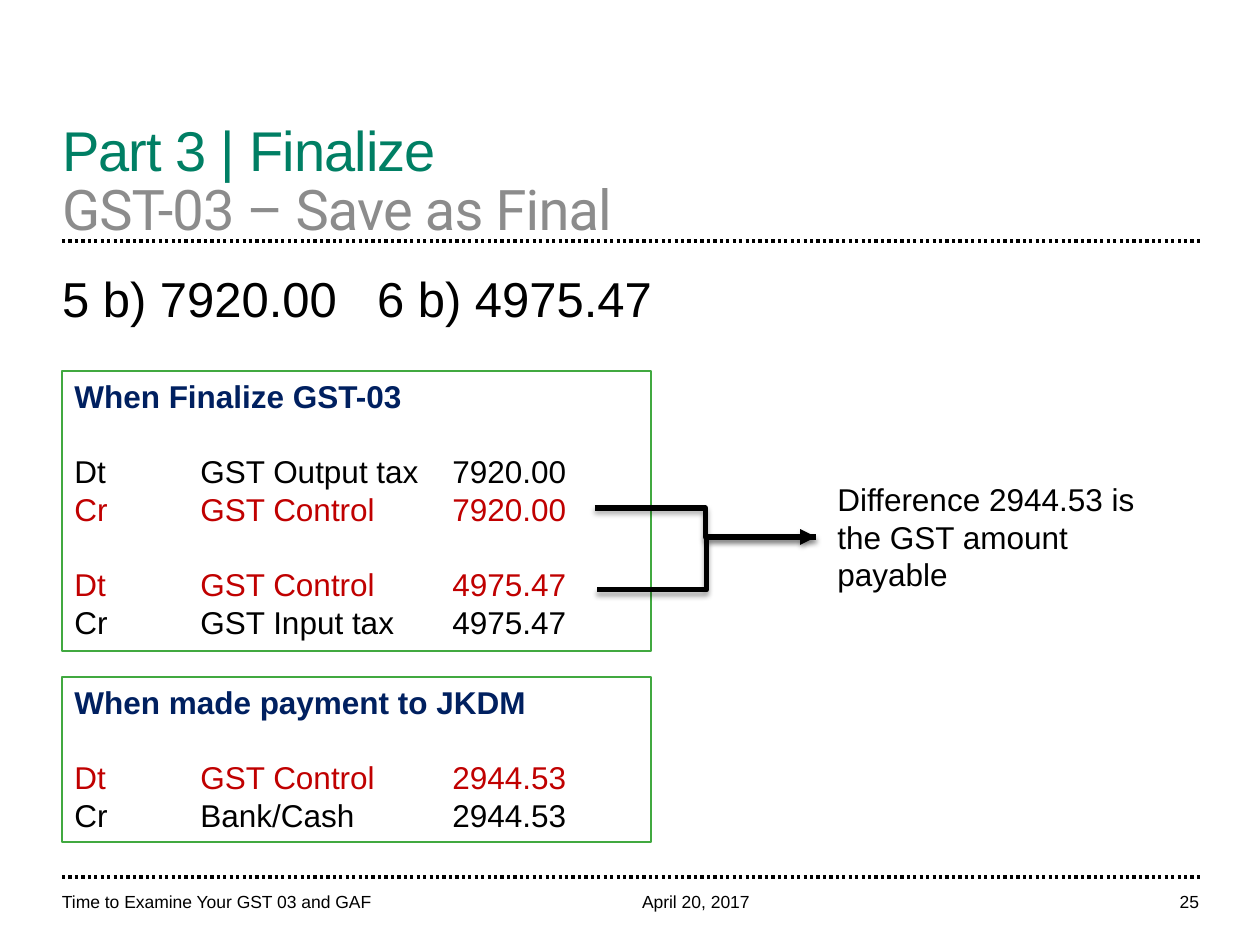
"""Build the GST-03 "Save as Final" slide with its journal entries."""
from lxml.etree import SubElement
from pptx import Presentation
from pptx.dml.color import RGBColor
from pptx.enum.dml import MSO_LINE
from pptx.enum.shapes import MSO_CONNECTOR, MSO_SHAPE
from pptx.enum.text import MSO_ANCHOR, MSO_AUTO_SIZE, PP_ALIGN
from pptx.oxml.ns import qn
from pptx.util import Emu, Pt

COLORS = {"black": "000000", "green": "007F64", "gray": "8C8C8C",
          "navy": "002060", "red": "C00000", "border": "41A940"}


def px(count):
    return Emu(round(count * 914400 / 126))


def write(para, text, size, color="black", font="Arial", bold=False):
    run = para.add_run()
    run.text = text
    run.font.size = Pt(size)
    run.font.name = font
    run.font.bold = bold
    run.font.color.rgb = RGBColor.from_string(COLORS[color])
    return run


prs = Presentation()
prs.slide_width, prs.slide_height = px(1260), px(945)
slide = prs.slides.add_slide(prs.slide_layouts[1])
shapes = slide.shapes
title, body = shapes.title, slide.placeholders[1]

for holder, top, height, anchor in (
        (title, 62, 180, MSO_ANCHOR.BOTTOM), (body, 266, 588, MSO_ANCHOR.TOP)):
    holder.left, holder.top = px(62), px(top)
    holder.width, holder.height = px(1137), px(height)
    frame = holder.text_frame
    frame.auto_size = MSO_AUTO_SIZE.NONE
    frame.vertical_anchor = anchor
    frame.margin_left = frame.margin_right = 0
    frame.margin_top = frame.margin_bottom = 0

para = title.text_frame.paragraphs[0]
para.alignment = PP_ALIGN.LEFT
para.line_spacing = Pt(34)
head = write(para, "Part 3 | Finalize", 32, "green")
para.add_line_break()
sub = write(para, "GST-03 – Save as Final", 32, "gray", "Roboto")
for run in (head, sub):
    run.font._element.set("spc", "-50")

para = body.text_frame.paragraphs[0]
props = para._p.get_or_add_pPr()
props.set("marL", "0")
props.set("indent", "0")
SubElement(props, qn("a:buNone"))
tabs = SubElement(props, qn("a:tabLst"))
SubElement(tabs, qn("a:tab"), pos=str(px(378)), algn="l")
para.space_before = Pt(0)
para.line_spacing = Pt(35)
write(para, "5 b) 7920.00\t6 b) 4975.47", 28)

for top in (241, 877):
    rule = shapes.add_connector(MSO_CONNECTOR.STRAIGHT, px(62), px(top), px(1200), px(top))
    rule.line.color.rgb = RGBColor.from_string(COLORS["black"])
    rule.line.width = Pt(1.85)
    rule.line.dash_style = MSO_LINE.ROUND_DOT
    SubElement(rule._element.spPr, qn("a:effectLst"))

for text, left, width, align in (
        ("Time to Examine Your GST 03 and GAF", 62, 556, PP_ALIGN.LEFT),
        ("April 20, 2017", 642, 295, PP_ALIGN.LEFT),
        ("25", 992, 207, PP_ALIGN.RIGHT)):
    frame = shapes.add_textbox(px(left), px(878), px(width), px(34)).text_frame
    frame.word_wrap = True
    frame.vertical_anchor = MSO_ANCHOR.BOTTOM
    frame.margin_left = frame.margin_right = 0
    frame.margin_top = frame.margin_bottom = 0
    frame.paragraphs[0].alignment = align
    write(frame.paragraphs[0], text, 10)

ENTRIES = (
    (371, 280, "When Finalize GST-03", (
        ("Dt\tGST Output tax\t7920.00", "black", True),
        ("Cr\tGST Control\t7920.00", "red", False),
        ("Dt\tGST Control\t4975.47", "red", True),
        ("Cr\tGST Input tax\t4975.47", "black", False))),
    (677, 165, "When made payment to JKDM", (
        ("Dt\tGST Control\t2944.53", "red", True),
        ("Cr\tBank/Cash\t2944.53", "black", False))),
)
for top, height, label, rows in ENTRIES:
    box = shapes.add_shape(MSO_SHAPE.RECTANGLE, px(62), px(top), px(589), px(height))
    box.shadow.inherit = False
    box.fill.background()
    box.line.color.rgb = RGBColor.from_string(COLORS["border"])
    box.line.width = Pt(0.75)
    frame = box.text_frame
    frame.word_wrap = True
    frame.vertical_anchor = MSO_ANCHOR.TOP
    para = frame.paragraphs[0]
    para.alignment = PP_ALIGN.LEFT
    para.line_spacing = Pt(21.5)
    write(para, label, 18, "navy", bold=True)
    for text, color, gap in rows:
        para = frame.add_paragraph()
        tabs = SubElement(para._p.get_or_add_pPr(), qn("a:tabLst"))
        for stop in (126, 378):
            SubElement(tabs, qn("a:tab"), pos=str(px(stop)), algn="l")
        para.alignment = PP_ALIGN.LEFT
        para.line_spacing = Pt(21.5)
        para.space_before = Pt(21.5 if gap else 0)
        write(para, text, 18, color)

for left, top, right, arrow in ((595, 508, 816, False), (597, 590, 816, True)):
    link = shapes.add_connector(MSO_CONNECTOR.ELBOW, px(left), px(top), px(right), px(537))
    link.line.color.rgb = RGBColor.from_string(COLORS["black"])
    link.line.width = Pt(3)
    if arrow:
        SubElement(link.line._get_or_add_ln(), qn("a:tailEnd"), type="triangle")
    effects = SubElement(link._element.spPr, qn("a:effectLst"))
    shadow = SubElement(effects, qn("a:outerShdw"), blurRad=str(Pt(3.1)),
                        dist=str(Pt(1.8)), dir="5400000", rotWithShape="0")
    tint = SubElement(shadow, qn("a:srgbClr"), val=COLORS["black"])
    SubElement(tint, qn("a:alpha"), val="35000")

frame = shapes.add_textbox(px(825), px(474), px(365), px(127)).text_frame
frame.word_wrap = True
frame.paragraphs[0].line_spacing = Pt(21.5)
write(frame.paragraphs[0], "Difference 2944.53 is the GST amount payable", 18)

prs.save("out.pptx")
